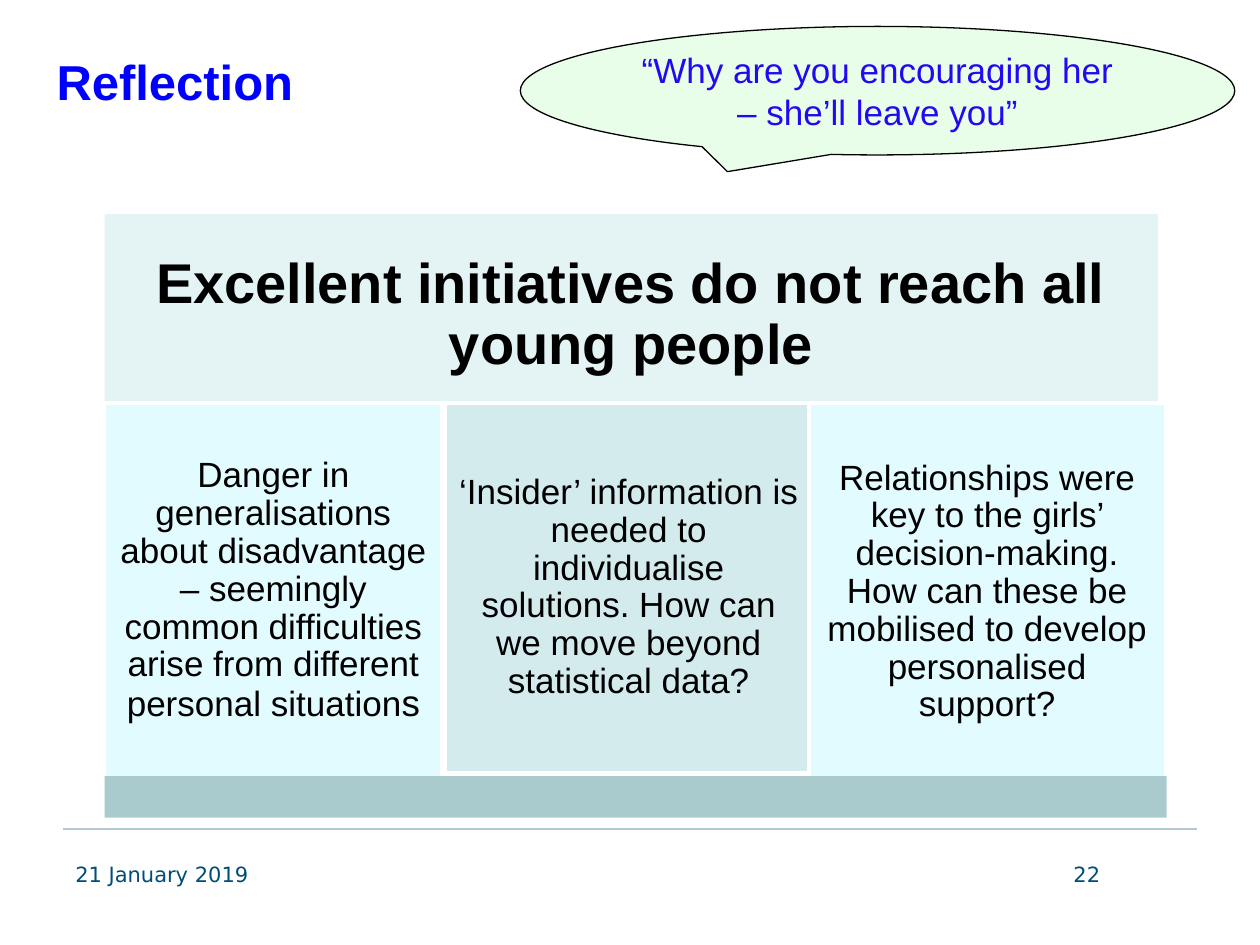
from pptx import Presentation
from pptx.dml.color import RGBColor
from pptx.enum.shapes import MSO_CONNECTOR, MSO_SHAPE
from pptx.enum.text import MSO_ANCHOR, PP_ALIGN
from pptx.oxml.ns import qn
from pptx.util import Inches, Pt
from lxml.etree import SubElement


def color(code):
    return RGBColor.from_string(code)


class Deck:
    font = "Arial"
    small = "DejaVu Sans"
    ink = "000000"
    foot = "004D75"

    def __init__(self):
        self.prs = Presentation()
        self.prs.slide_width = Inches(10)
        self.prs.slide_height = Inches(7.5)
        self.slide = self.prs.slides.add_slide(self.prs.slide_layouts[6])

    def fill_text(self, frame, runs, tint, align, face=font, bold=False, pad=None, space=None):
        frame.word_wrap = True
        if pad:
            frame.margin_left = frame.margin_right = Inches(pad)
            frame.margin_top = frame.margin_bottom = Inches(pad)
        para = frame.paragraphs[0]
        para.alignment = align
        if space:
            para.line_spacing = space
        for text, size in runs:
            run = para.add_run()
            run.text = text
            run.font.name = face
            run.font.size = Pt(size)
            run.font.bold = bold
            run.font.color.rgb = color(tint)

    def label(self, box, text, size, tint, align=PP_ALIGN.LEFT, **style):
        item = self.slide.shapes.add_textbox(*map(Inches, box))
        self.fill_text(item.text_frame, [(text, size)], tint, align, **style)

    def shape(self, kind, box, fill, edge=None, width=1):
        item = self.slide.shapes.add_shape(kind, *map(Inches, box))
        item.shadow.inherit = False
        item.fill.solid()
        item.fill.fore_color.rgb = color(fill)
        if edge:
            item.line.color.rgb = color(edge)
            item.line.width = Pt(width)
        else:
            item.line.fill.background()
        item.text_frame.vertical_anchor = MSO_ANCHOR.MIDDLE
        return item

    def panel(self, box, fill, runs=(), edge=None, pad=0.08, bold=False):
        item = self.shape(MSO_SHAPE.RECTANGLE, box, fill, edge, 2)
        if runs:
            self.fill_text(item.text_frame, runs, self.ink, PP_ALIGN.CENTER,
                           bold=bold, pad=pad, space=0.9)

    def bubble(self, box, text, fill, tint, tip):
        item = self.shape(MSO_SHAPE.OVAL_CALLOUT, box, fill, self.ink, 0.75)
        item.adjustments[0], item.adjustments[1] = tip
        self.fill_text(item.text_frame, [(text, 20)], tint, PP_ALIGN.CENTER)

    def rule(self, left, right, top, tint):
        line = self.slide.shapes.add_connector(
            MSO_CONNECTOR.STRAIGHT, Inches(left), Inches(top), Inches(right), Inches(top))
        line.line.color.rgb = color(tint)
        line.line.width = Pt(1.25)
        SubElement(line._element.spPr, qn("a:effectLst"))


def main():
    deck = Deck()
    deck.rule(0.5, 9.5, 6.58, "B2C9D5")
    for left, text, align in [(0.5, "21 January 2019", PP_ALIGN.LEFT),
                              (6.5, "22", PP_ALIGN.RIGHT)]:
        deck.label((left, 6.79, 2.33, 0.52), text, 12, deck.foot, align, face=deck.small)
    deck.label((0.35, 0.36, 9.08, 0.79), "Reflection", 28, "0000FF", bold=True)
    deck.bubble((4.13, 0.21, 5.67, 1.02), "“Why are you encouraging her – she’ll leave you”",
                "E8FEE9", "2408F4", (-0.21, 0.63))

    deck.panel((0.83, 1.7, 8.36, 1.61), "E4F3F4",
               [("Excellent initiatives do not reach all young people", 32)],
               pad=0.13, bold=True)
    pale, deep = "E2FBFE", "D3EBED"
    cards = [
        (0.83, 2.68, 2.98, pale, [
            ("Danger in generalisations about disadvantage – seemingly common "
             "difficulties arise from different personal situation", 20), ("s", 21)]),
        (3.53, 2.92, 2.93, deep, [
            ("‘Insider’ information is needed to individualise solutions. "
             "How can we move beyond statistical data?", 20)]),
        (6.42, 2.83, 3, pale, [
            ("Relationships were key to the girls’ decision-making. "
             "How can these be mobilised to develop personalised support?", 20)]),
    ]
    for left, width, height, fill, runs in cards:
        deck.panel((left, 3.2, width, height), fill, runs, "FFFFFF")
    deck.panel((0.83, 6.16, 8.43, 0.33), "AACBCE")
    deck.prs.save("out.pptx")


if __name__ == "__main__":
    main()
